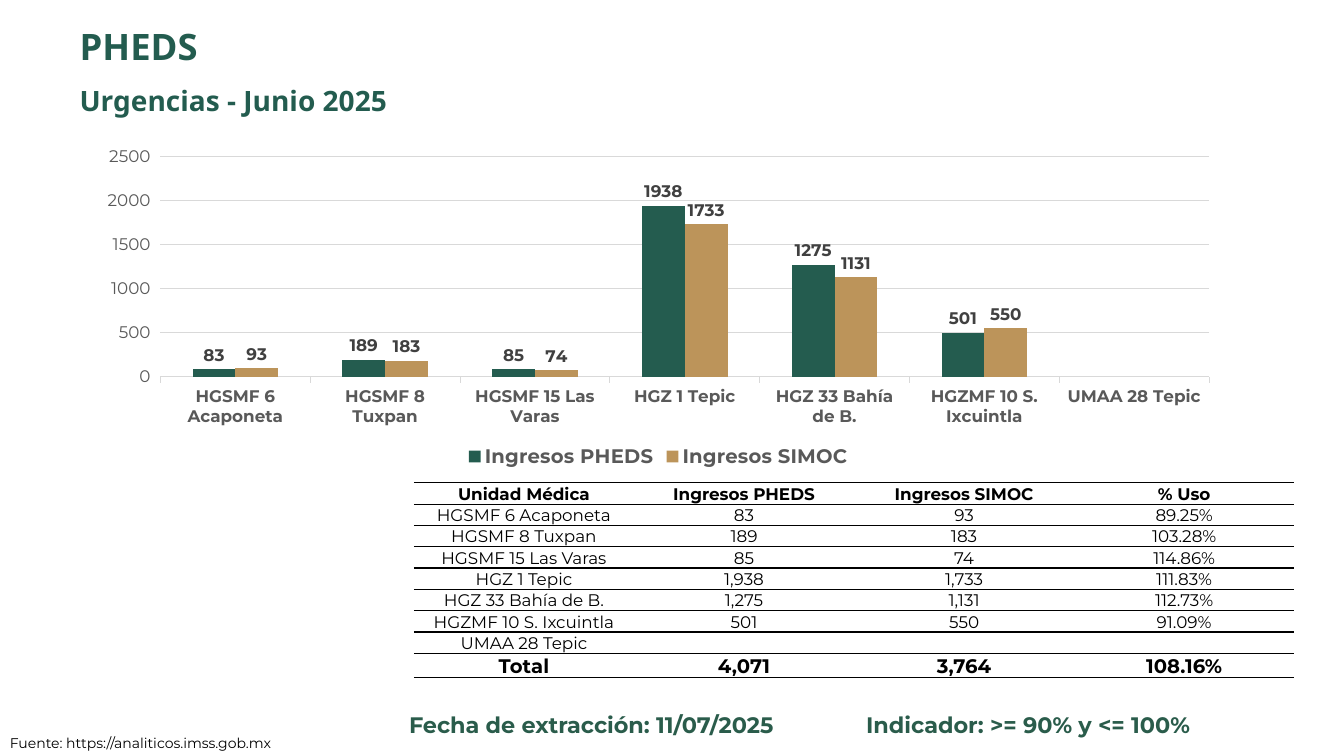
from collections import namedtuple

from lxml import etree
from pptx import Presentation
from pptx import util as u
from pptx.chart.data import CategoryChartData
from pptx.dml.color import RGBColor
from pptx.enum import chart as charts
from pptx.enum import text
from pptx.oxml import ns

GREEN = RGBColor(0x23, 0x5C, 0x4F)
BAR_GREEN = RGBColor(0x24, 0x5C, 0x4F)
NOTE_GREEN = RGBColor(0x2A, 0x5C, 0x4B)
GOLD = RGBColor(0xBC, 0x94, 0x5A)
BLACK = RGBColor(0, 0, 0)
LABEL_GRAY = RGBColor(0x40, 0x40, 0x40)
AXIS_GRAY = RGBColor(0x59, 0x59, 0x59)
GRID_GRAY = RGBColor(0xD9, 0xD9, 0xD9)
BODY_FONT = "Montserrat"
HEAD_FONT = "Noto Sans"

SLIDE_WIDTH = u.Inches(13.33)
SLIDE_HEIGHT = u.Inches(7.5)
COLUMN = SLIDE_WIDTH / 100
ROW = SLIDE_HEIGHT / 100

Box = namedtuple("Box", "left top width height")

HEADERS = ["Unidad Médica", "Ingresos PHEDS", "Ingresos SIMOC", "% Uso"]
UNITS = [
    ("HGSMF 6 Acaponeta", 83, 93, "89.25%"),
    ("HGSMF 8 Tuxpan", 189, 183, "103.28%"),
    ("HGSMF 15 Las Varas", 85, 74, "114.86%"),
    ("HGZ 1 Tepic", 1938, 1733, "111.83%"),
    ("HGZ 33 Bahía de B.", 1275, 1131, "112.73%"),
    ("HGZMF 10 S. Ixcuintla", 501, 550, "91.09%"),
    ("UMAA 28 Tepic", None, None, ""),
]
TOTAL = ("Total", 4071, 3764, "108.16%")


def grid_box(left, top, width, height):
    return Box(round(left * COLUMN), round(top * ROW), round(width * COLUMN), round(height * ROW))


def set_font(font, size, color, bold=False, name=BODY_FONT):
    font.size = u.Pt(size)
    font.bold = bold
    font.name = name
    font.color.rgb = color


def write(frame, wording, size, color, bold=False, name=BODY_FONT, align=None, spacing=None):
    para = frame.paragraphs[0]
    para.alignment = align
    para.line_spacing = spacing
    if wording:
        span = para.add_run()
        span.text = wording
        set_font(span.font, size, color, bold, name)
    else:
        end = etree.SubElement(para._p, ns.qn("a:endParaRPr"))
        end.set("sz", str(size * 100))


def add_text(page, box, wording, wrap=True, **style):
    frame = page.shapes.add_textbox(*box).text_frame
    frame.word_wrap = wrap
    write(frame, wording, **style)


def add_heading(page, box):
    height = round(box.height * 0.46)
    gap = round(box.height * 0.54)
    for index, (wording, size) in enumerate([("PHEDS", 26), ("Urgencias - Junio 2025", 20)]):
        line_box = Box(box.left, box.top + index * gap, box.width, height)
        add_text(page, line_box, wording, size=size, color=GREEN, bold=True,
                 name=HEAD_FONT, spacing=0.9)


def add_admissions_chart(page, box):
    data = CategoryChartData()
    data.categories = [unit[0] for unit in UNITS]
    for index in (1, 2):
        data.add_series(HEADERS[index], [unit[index] for unit in UNITS])
    chart = page.shapes.add_chart(charts.XL_CHART_TYPE.COLUMN_CLUSTERED, *box, data).chart
    set_font(chart.font, 10, BLACK)
    chart.has_title = False
    chart.has_legend = True
    chart.legend.position = charts.XL_LEGEND_POSITION.BOTTOM
    chart.legend.include_in_layout = False
    set_font(chart.legend.font, 14, AXIS_GRAY, bold=True)

    units_axis, value_axis = chart.category_axis, chart.value_axis
    set_font(units_axis.tick_labels.font, 12, AXIS_GRAY, bold=True)
    set_font(value_axis.tick_labels.font, 12, AXIS_GRAY)
    value_axis.minimum_scale = 0
    value_axis.maximum_scale = 2500
    value_axis.major_unit = 500
    value_axis.format.line.fill.background()
    for line in (units_axis.format.line, value_axis.major_gridlines.format.line):
        line.color.rgb = GRID_GRAY
        line.width = u.Pt(0.75)

    plot = chart.plots[0]
    plot.gap_width = 150
    plot.overlap = 0
    plot.vary_by_categories = False
    for series, color in zip(plot.series, (BAR_GREEN, GOLD)):
        series.format.fill.solid()
        series.format.fill.fore_color.rgb = color
        series.invert_if_negative = False
        labels = series.data_labels
        labels.show_value = True
        labels.position = charts.XL_LABEL_POSITION.OUTSIDE_END
        set_font(labels.font, 12, LABEL_GRAY, bold=True)


def rule_cell(cell):
    properties = cell._tc.get_or_add_tcPr()
    for side in ("L", "R", "T", "B"):
        line = etree.SubElement(properties, ns.qn("a:ln" + side))
        if side in "LR":
            etree.SubElement(line, ns.qn("a:noFill"))
        else:
            line.set("w", str(u.Pt(1)))
            fill = etree.SubElement(line, ns.qn("a:solidFill"))
            etree.SubElement(fill, ns.qn("a:srgbClr")).set("val", str(BLACK))
    cell.fill.background()


def display(value):
    if value is None:
        return ""
    return f"{value:,}" if isinstance(value, int) else value


def add_usage_table(page, box):
    rows = [HEADERS, *UNITS, TOTAL]
    last = len(rows) - 1
    table = page.shapes.add_table(len(rows), len(HEADERS), *box).table
    table.first_row = False
    table.horz_banding = False
    for column in table.columns:
        column.width = round(box.width / len(HEADERS))
    for index, values in enumerate(rows):
        table.rows[index].height = round(box.height * (8 if index == last else 7) / 64)
        for position, value in enumerate(values):
            cell = table.cell(index, position)
            rule_cell(cell)
            cell.margin_left = cell.margin_right = cell.margin_top = u.Inches(0.01)
            cell.margin_bottom = 0
            cell.vertical_anchor = text.MSO_ANCHOR.MIDDLE
            write(cell.text_frame, display(value), size=14 if index == last else 12,
                  color=BLACK, bold=index in (0, last), align=text.PP_ALIGN.CENTER)


def add_footer(page, box):
    note_height = round(box.height * 0.74)
    notes = [
        ("Fecha de extracción: 11/07/2025", 0.25, 0.38),
        ("Indicador: >= 90% y <= 100%", 0.55, 0.43),
    ]
    for wording, left, width in notes:
        note_box = Box(box.left + round(box.width * left), box.top,
                       round(box.width * width), note_height)
        add_text(page, note_box, wording, size=16, color=NOTE_GREEN, bold=True,
                 align=text.PP_ALIGN.CENTER)
    source_box = Box(box.left, box.top + round(box.height * 0.46),
                     round(box.width * 0.22), round(box.height * 0.54))
    add_text(page, source_box, "Fuente: https://analiticos.imss.gob.mx", wrap=False,
             size=10, color=BLACK, align=text.PP_ALIGN.LEFT)


def build_usage_slide(deck):
    page = deck.slides.add_slide(deck.slide_layouts[6])
    add_heading(page, grid_box(5.18, 3.2, 71.1, 14.26))
    add_admissions_chart(page, grid_box(6.3, 18.53, 85.37, 44))
    add_usage_table(page, grid_box(30.8, 63.87, 65.5, 25.8))
    add_footer(page, grid_box(0, 93.4, 100, 6.6))


def main():
    deck = Presentation()
    deck.slide_width = SLIDE_WIDTH
    deck.slide_height = SLIDE_HEIGHT
    build_usage_slide(deck)
    deck.save("out.pptx")


if __name__ == "__main__":
    main()
